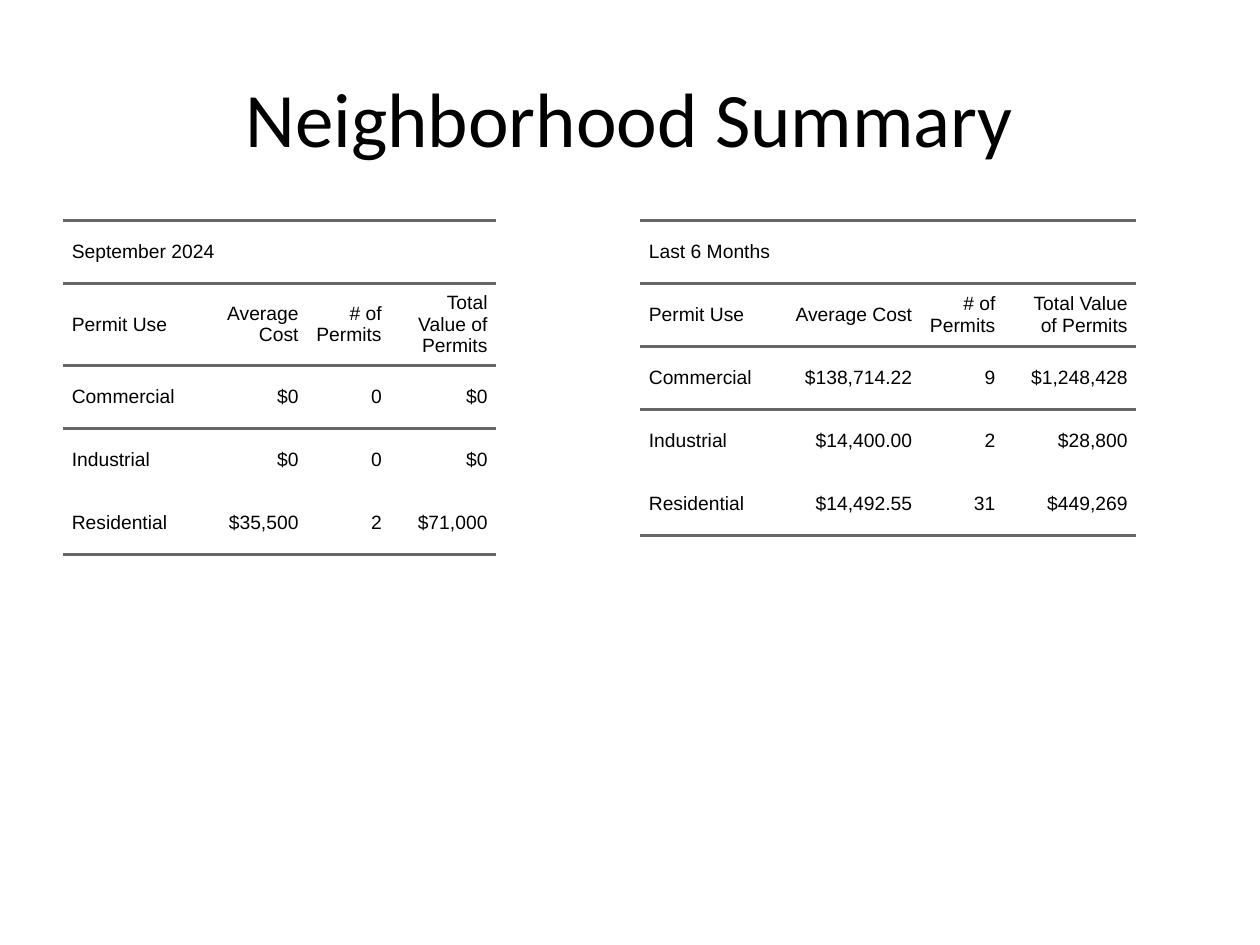
from lxml.etree import SubElement
from pptx import Presentation
from pptx.dml.color import RGBColor
from pptx.enum.text import MSO_ANCHOR, PP_ALIGN
from pptx.oxml.ns import qn
from pptx.util import Inches, Pt

COLORS = {"text": "000000", "rule": "666666"}
NO_STYLE_NO_GRID = "{2D5ABB26-0587-4C30-8999-92F81FD0307C}"
ROW_HEIGHT = 0.5
CELL_FORMAT = {
    "margin_left": Inches(0.07),
    "margin_right": Inches(0.07),
    "margin_top": Inches(0.07),
    "margin_bottom": Inches(0.07),
    "vertical_anchor": MSO_ANCHOR.MIDDLE,
}
HEADINGS = ["Permit Use", "Average Cost", "# of Permits", "Total Value of Permits"]
TABLES = [
    {
        "left": 0.5,
        "widths": [1.1, 0.84, 0.66, 0.84],
        "period": "September 2024",
        "permits": [
            ["Commercial", "$0", "0", "$0"],
            ["Industrial", "$0", "0", "$0"],
            ["Residential", "$35,500", "2", "$71,000"],
        ],
    },
    {
        "left": 5.08,
        "widths": [1.1, 1.13, 0.66, 1.05],
        "period": "Last 6 Months",
        "permits": [
            ["Commercial", "$138,714.22", "9", "$1,248,428"],
            ["Industrial", "$14,400.00", "2", "$28,800"],
            ["Residential", "$14,492.55", "31", "$449,269"],
        ],
    },
]


def set_font(span, name, size):
    span.font.name = name
    span.font.size = Pt(size)
    span.font.color.rgb = RGBColor.from_string(COLORS["text"])


def add_border(cell, side):
    line = SubElement(cell._tc.get_or_add_tcPr(), qn(f"a:ln{side}"), w=str(Pt(1.5)))
    fill = SubElement(line, qn("a:solidFill"))
    SubElement(fill, qn("a:srgbClr"), val=COLORS["rule"])


deck = Presentation()
deck.slide_width, deck.slide_height = Inches(10), Inches(7.5)
page = deck.slides.add_slide(deck.slide_layouts[5])

# Title
title = page.shapes.title
title.left, title.top = Inches(0.5), Inches(0.3)
title.width, title.height = Inches(9), Inches(1.25)
title.text_frame.vertical_anchor = MSO_ANCHOR.MIDDLE
para = title.text_frame.paragraphs[0]
para.alignment = PP_ALIGN.CENTER
span = para.add_run()
span.text = "Neighborhood Summary"
set_font(span, "Calibri", 44)

# Permit tables, one for each period
for summary in TABLES:
    rows = [[summary["period"], "", "", ""], HEADINGS, *summary["permits"]]
    frame = page.shapes.add_table(
        len(rows), len(HEADINGS), Inches(summary["left"]), Inches(1.75),
        Inches(sum(summary["widths"])), Inches(ROW_HEIGHT * len(rows)),
    )
    table = frame.table
    table.first_row = table.horz_banding = False
    table._tbl.tblPr.find(qn("a:tableStyleId")).text = NO_STYLE_NO_GRID
    for column, width in zip(table.columns, summary["widths"]):
        column.width = Inches(width)

    for row_number, texts in enumerate(rows):
        table.rows[row_number].height = Inches(ROW_HEIGHT)
        for column_number, text in enumerate(texts):
            cell = table.cell(row_number, column_number)
            for name, value in CELL_FORMAT.items():
                setattr(cell, name, value)

            # Rules above the period, headings and first permit, and at the foot
            if row_number <= 2:
                add_border(cell, "T")
            if row_number in (0, 1, len(rows) - 1):
                add_border(cell, "B")
            cell.fill.background()

            if text:
                para = cell.text_frame.paragraphs[0]
                para.alignment = PP_ALIGN.RIGHT if column_number else PP_ALIGN.LEFT
                span = para.add_run()
                span.text = text
                set_font(span, "Arial", 11)
    table.cell(0, 0).merge(table.cell(0, len(HEADINGS) - 1))

deck.save("out.pptx")
